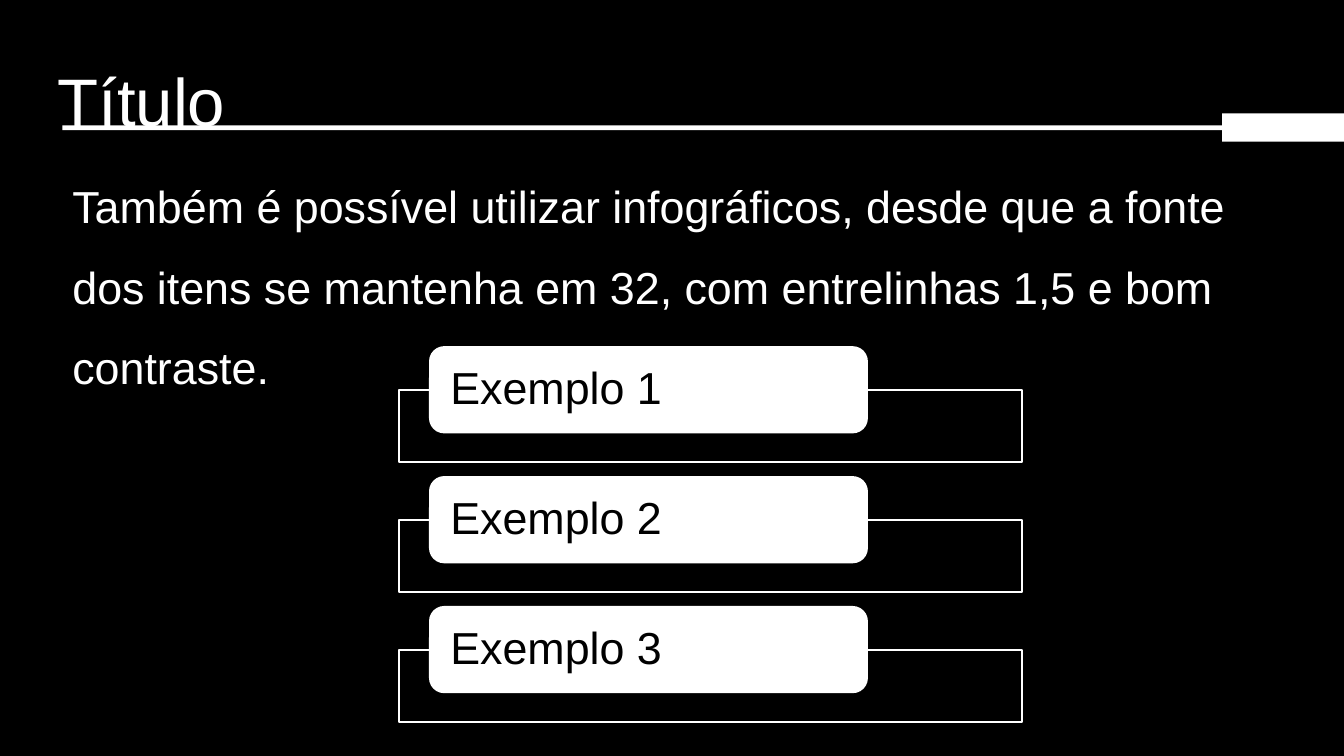
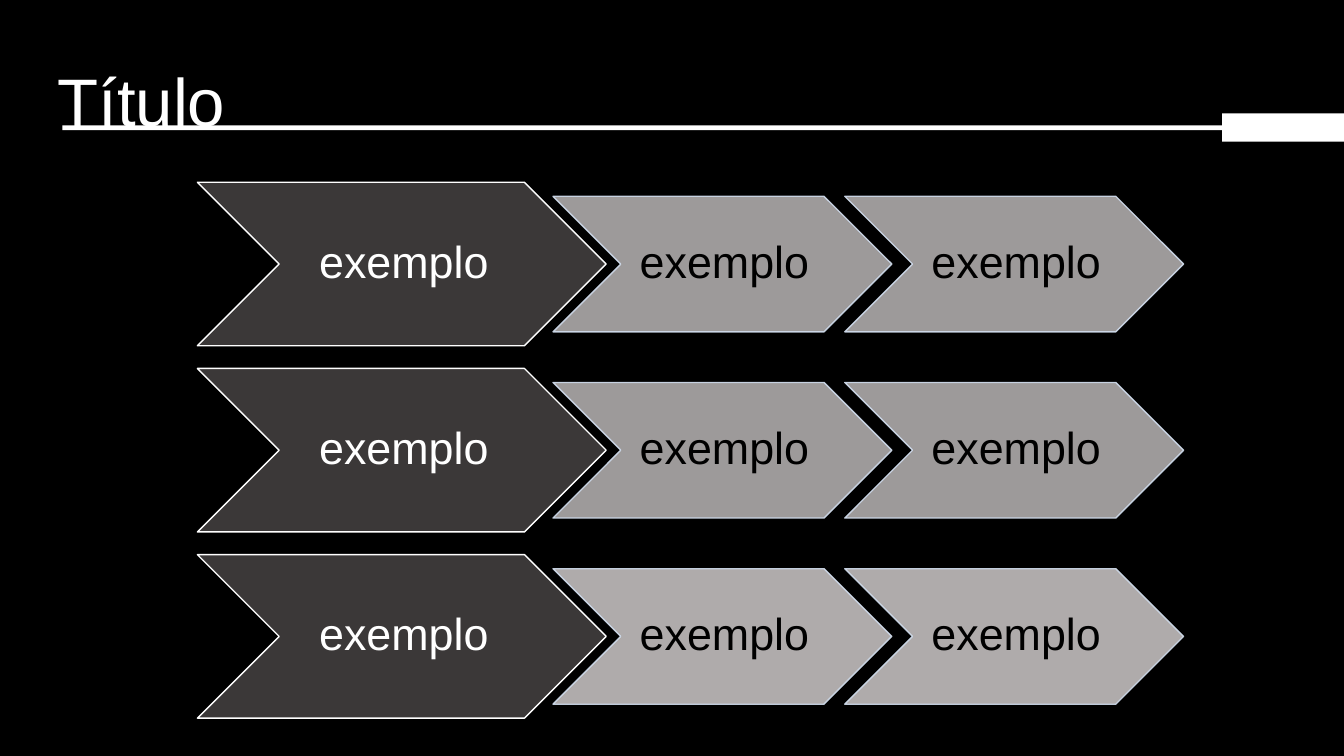
from lxml.etree import SubElement
from pptx import Presentation
from pptx.dml.color import RGBColor
from pptx.enum.shapes import MSO_SHAPE
from pptx.enum.text import MSO_ANCHOR, PP_ALIGN
from pptx.oxml.ns import qn
from pptx.util import Pt

COLORS = {
    "black": "000000",
    "white": "FFFFFF",
    "charcoal": "3B3838",
    "gray": "AFABAB",
    "pale_blue": "D2DEEF",
}
FONT = "Arial"
SLIDE_WIDTH, SLIDE_HEIGHT = 960, 540
BODY_SIZE, TITLE_SIZE = 32, 48


def rgb(name):
    return RGBColor.from_string(COLORS[name])


def set_opacity(fill, percent):
    color = fill._xPr.find(qn("a:solidFill"))[0]
    SubElement(color, qn("a:alpha"), val=str(percent * 1000))


def add_box(slide, kind, left, top, width, height, fill=None, line=None,
            line_width=1, fill_opacity=100, line_opacity=100):
    box = slide.shapes.add_shape(kind, Pt(left), Pt(top), Pt(width), Pt(height))
    box.shadow.inherit = False
    if fill:
        box.fill.solid()
        box.fill.fore_color.rgb = rgb(fill)
        if fill_opacity < 100:
            set_opacity(box.fill, fill_opacity)
    else:
        box.fill.background()
    if line:
        box.line.color.rgb = rgb(line)
        box.line.width = Pt(line_width)
        if line_opacity < 100:
            set_opacity(box.line.fill, line_opacity)
    else:
        box.line.fill.background()
    return box


def write(shape, text, color, size=BODY_SIZE, align=PP_ALIGN.LEFT, spacing=0.9):
    shape.text_frame.word_wrap = True
    paragraph = shape.text_frame.paragraphs[0]
    paragraph.text = text
    paragraph.alignment = align
    paragraph.line_spacing = spacing
    paragraph.font.name = FONT
    paragraph.font.size = Pt(size)
    paragraph.font.color.rgb = rgb(color)
    return paragraph


def set_label(shape, text, color, align, left, right, vertical):
    frame = shape.text_frame
    frame.margin_left, frame.margin_right = Pt(left), Pt(right)
    frame.margin_top = frame.margin_bottom = Pt(vertical)
    frame.vertical_anchor = MSO_ANCHOR.MIDDLE
    write(shape, text, color, align=align)


def add_text(slide, text, left, top, width, height, size=BODY_SIZE):
    box = slide.shapes.add_textbox(Pt(left), Pt(top), Pt(width), Pt(height))
    return write(box, text, "white", size, spacing=1.5)


def add_slide(deck):
    slide = deck.slides.add_slide(deck.slide_layouts[6])
    slide.background.fill.solid()
    slide.background.fill.fore_color.rgb = rgb("black")
    return slide


def add_header(slide, title):
    add_text(slide, title, 34, 10, 720, 74, TITLE_SIZE)
    for left, top, height in ((44.6, 89.5, 3.5), (873, 81, 20.2)):
        add_box(slide, MSO_SHAPE.RECTANGLE, left, top, SLIDE_WIDTH - left, height, "white")


def add_list_item(slide, text, top):
    add_box(slide, MSO_SHAPE.RECTANGLE, 285, top + 30.5, 445, 51.5,
            line="white", line_width=1.5)
    tab = add_box(slide, MSO_SHAPE.ROUNDED_RECTANGLE, 307.2, top, 312, 60.8,
                  "white", "white", 1.5)
    set_label(tab, text, "black", PP_ALIGN.LEFT, 11.5, 11.5, 0)


def add_chevron(slide, text, left, middle, width, height, text_color, **style):
    chevron = add_box(slide, MSO_SHAPE.CHEVRON, left, middle - height / 2,
                      width, height, **style)
    set_label(chevron, text, text_color, PP_ALIGN.CENTER, 3, 0, 1.5)


def add_process_row(slide, texts, middle, step_opacity):
    lead, *steps = texts
    add_chevron(slide, lead, 141, middle, 292, 116.8, "white",
                fill="charcoal", line="white")
    for index, step in enumerate(steps):
        add_chevron(slide, step, 395 + 208.4 * index, middle, 242, 96.8, "black",
                    fill="gray", line="pale_blue",
                    fill_opacity=step_opacity, line_opacity=90)


def build_list_slide(deck):
    slide = add_slide(deck)
    intro = add_text(
        slide,
        "Também é possível utilizar infográficos, desde que a fonte dos itens "
        "se mantenha em 32, com entrelinhas 1,5 e bom contraste.",
        44.6, 105, 890, 383)
    intro.space_before = Pt(10)
    for index in range(3):
        add_list_item(slide, f"Exemplo {index + 1}", 248 + 92.8 * index)
    add_header(slide, "Título")


def build_process_slide(deck):
    slide = add_slide(deck)
    for index, step_opacity in enumerate((90, 90, 100)):
        add_process_row(slide, ["exemplo"] * 3, 188.6 + 133 * index, step_opacity)
    add_header(slide, "Título")


def main():
    deck = Presentation()
    deck.slide_width, deck.slide_height = Pt(SLIDE_WIDTH), Pt(SLIDE_HEIGHT)
    build_list_slide(deck)
    build_process_slide(deck)
    deck.save("out.pptx")


if __name__ == "__main__":
    main()
